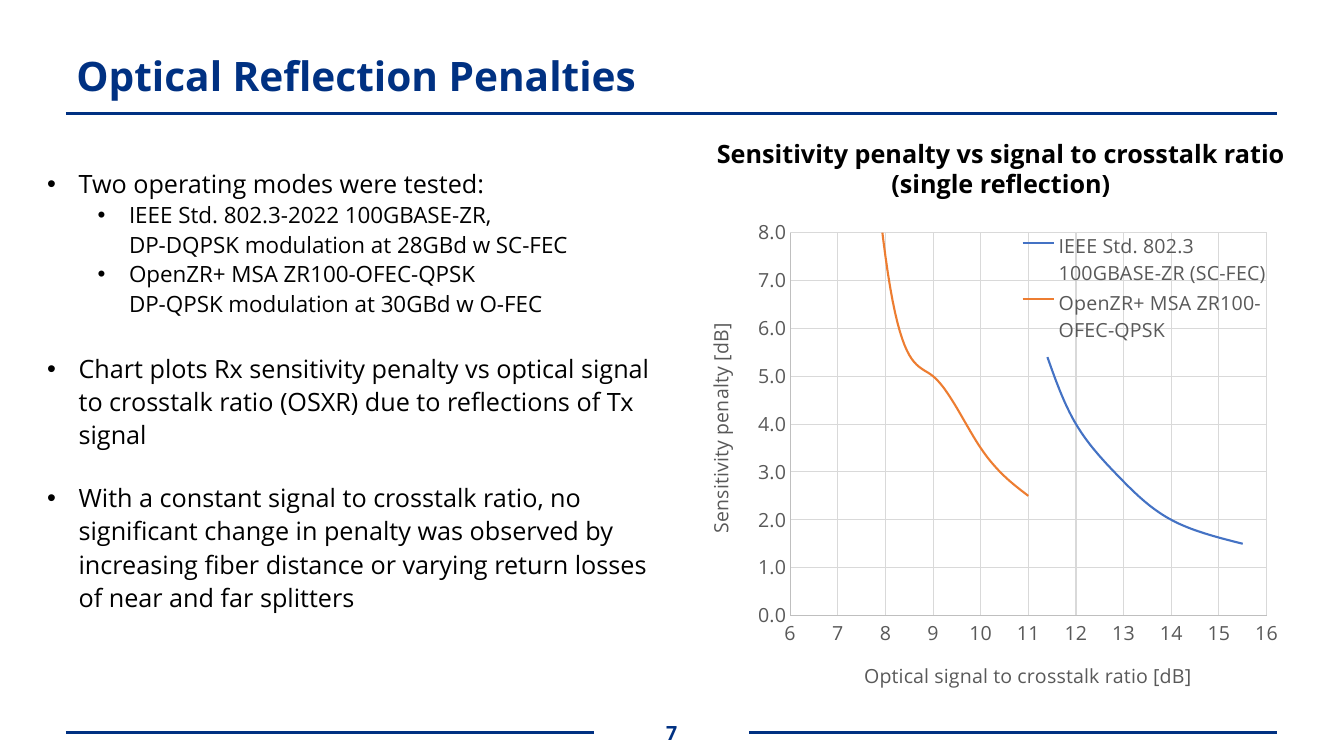
from dataclasses import dataclass
from typing import Any, Optional

from lxml.etree import SubElement
from pptx import Presentation
from pptx.chart.data import XyChartData
from pptx.dml.color import RGBColor
from pptx.enum.chart import XL_CHART_TYPE, XL_LEGEND_POSITION, XL_TICK_MARK
from pptx.enum.shapes import MSO_CONNECTOR, MSO_SHAPE
from pptx.enum.text import MSO_ANCHOR, PP_ALIGN
from pptx.oxml.ns import qn
from pptx.util import Pt

FONT = "Open Sans"
COLORS = {
    "navy": "003182", "black": "000000", "white": "FFFFFF", "gray": "595959",
    "axis": "BFBFBF", "grid": "D9D9D9", "blue": "4472C4", "orange": "ED7D31",
}


@dataclass(frozen=True)
class Rule:
    left: float
    right: float
    y: float


@dataclass(frozen=True)
class Bullet:
    text: str
    level: int = 0
    before: float = 0


@dataclass(frozen=True)
class Curve:
    name: str
    color: str
    points: tuple[tuple[Optional[float], Optional[float]], ...]


@dataclass(frozen=True)
class AxisSpec:
    title: str
    low: float
    high: float
    number_format: str
    title_at: tuple[float, float]


RULES = [Rule(47, 912.2, 81.1), Rule(47, 424, 523.4), Rule(535.2, 912.2, 523.4)]
BULLETS = [
    Bullet("Two operating modes were tested:"),
    Bullet("IEEE Std. 802.3-2022 100GBASE-ZR, \vDP-DQPSK modulation at 28GBd w SC-FEC", 1),
    Bullet("OpenZR+ MSA ZR100-OFEC-QPSK\vDP-QPSK modulation at 30GBd w O-FEC", 1),
    Bullet("Chart plots Rx sensitivity penalty vs optical signal to crosstalk ratio (OSXR) "
           "due to reflections of Tx signal", before=24),
    Bullet("With a constant signal to crosstalk ratio, no significant change in penalty was "
           "observed by increasing fiber distance or varying return losses of near and far "
           "splitters", before=21),
]
CURVES = [
    Curve("IEEE Std. 802.3 100GBASE-ZR (SC-FEC)", "blue",
          ((None, None), (15.5, 1.5), (14, 2), (12.9, 2.9), (12, 4), (11.4, 5.4))),
    Curve("OpenZR+ MSA ZR100-OFEC-QPSK", "orange",
          ((11, 2.5), (10, 3.5), (9, 5), (8, 7.5), (7, 20))),
]
X_AXIS = AxisSpec("Optical signal to crosstalk ratio [dB]", 6, 16, "0", (0.27, 0.93))
Y_AXIS = AxisSpec("Sensitivity penalty [dB]", 0, 8, "0.0", (0.01, 0.23))


def rgb(name: str) -> RGBColor:
    return RGBColor.from_string(COLORS[name])


def style_font(font: Any, size: float, color: str, bold: bool = False) -> None:
    font.name = FONT
    font.size = Pt(size)
    font.bold = bold
    font.color.rgb = rgb(color)


def style_line(line: Any, color: str, width: float) -> None:
    line.color.rgb = rgb(color)
    line.width = Pt(width)


def add_rule(s: Any, rule: Rule) -> None:
    sp = s.shapes.add_connector(
        MSO_CONNECTOR.STRAIGHT, Pt(rule.left), Pt(rule.y), Pt(rule.right), Pt(rule.y))
    style_line(sp.line, "navy", 2)
    SubElement(sp.element.spPr, qn("a:effectLst"))


def fill_text(sp: Any, text: str, size: float, color: str,
              align: PP_ALIGN, anchor: MSO_ANCHOR) -> None:
    """Put one bold paragraph into a shape."""
    tf = sp.text_frame
    tf.word_wrap = True
    tf.vertical_anchor = anchor
    tf.text = text
    p = tf.paragraphs[0]
    p.alignment = align
    style_font(p.runs[0].font, size, color, bold=True)


def add_bullets(s: Any) -> None:
    sp = s.shapes.add_textbox(Pt(26.6), Pt(114.5), Pt(453.6), Pt(365))
    tf = sp.text_frame
    tf.word_wrap = True
    for i, bullet in enumerate(BULLETS):
        p = tf.paragraphs[0] if i == 0 else tf.add_paragraph()
        p.text = bullet.text
        p.level = bullet.level
        pPr = p._p.get_or_add_pPr()
        pPr.set("marL", str(Pt(22.5 + 36 * bullet.level)))
        pPr.set("indent", str(-Pt(22.5)))
        SubElement(pPr, qn("a:buFont"), typeface="Arial")
        SubElement(pPr, qn("a:buChar"), char="•")
        p.line_spacing = 1.1
        if bullet.before:
            p.space_before = Pt(bullet.before)
        for r in p.runs:
            style_font(r.font, 18 - 2 * bullet.level, "black")


def place(parent: Any, index: int, inner: bool = False, **fractions: float) -> None:
    """Give a chart part a manual layout, in fractions of the chart."""
    for old in parent.findall(qn("c:layout")):
        parent.remove(old)
    layout = SubElement(parent, qn("c:layout"))
    parent.insert(index, layout)
    manual = SubElement(layout, qn("c:manualLayout"))
    if inner:
        SubElement(manual, qn("c:layoutTarget"), val="inner")
    for key in ("x", "y"):
        SubElement(manual, qn(f"c:{key}Mode"), val="edge")
    for key, value in fractions.items():
        SubElement(manual, qn(f"c:{key}"), val=str(value))


def style_axis(axis: Any, spec: AxisSpec) -> None:
    axis.minimum_scale, axis.maximum_scale = spec.low, spec.high
    axis.major_unit = 1
    axis.major_tick_mark = axis.minor_tick_mark = XL_TICK_MARK.NONE
    axis.has_major_gridlines = True
    style_line(axis.major_gridlines.format.line, "grid", 0.75)
    style_line(axis.format.line, "axis", 0.75)
    labels = axis.tick_labels
    labels.number_format = spec.number_format
    labels.number_format_is_linked = False
    style_font(labels.font, 14, "gray")
    tf = axis.axis_title.text_frame
    tf.text = spec.title
    style_font(tf.paragraphs[0].runs[0].font, 14, "gray")
    x, y = spec.title_at
    place(axis.axis_title._element, 1, x=x, y=y)


def style_curve(series: Any, curve: Curve) -> None:
    """Smooth the line and leave points without a value empty."""
    style_line(series.format.line, curve.color, 1.5)
    ser = series._element
    for old in ser.findall(qn("c:smooth")):
        ser.remove(old)
    SubElement(ser, qn("c:smooth"), val="1")
    for pt in list(ser.iter(qn("c:pt"))):
        if pt.findtext(qn("c:v")) == "None":
            pt.getparent().remove(pt)


def add_penalty_chart(s: Any) -> None:
    data = XyChartData()
    for curve in CURVES:
        series = data.add_series(curve.name)
        for x, y in curve.points:
            series.add_data_point(x, y)
    chart = s.shapes.add_chart(
        XL_CHART_TYPE.XY_SCATTER_SMOOTH_NO_MARKERS,
        Pt(496.8), Pt(151.2), Pt(436.3), Pt(345.6), data).chart
    style_font(chart.font, 14, "black")
    chart.has_title = False
    plot = chart.plots[0]
    plot.vary_by_categories = False
    for series, curve in zip(plot.series, CURVES):
        style_curve(series, curve)
    style_axis(chart.category_axis, X_AXIS)
    style_axis(chart.value_axis, Y_AXIS)
    chart.has_legend = True
    legend = chart.legend
    legend.position = XL_LEGEND_POSITION.RIGHT
    legend.include_in_layout = True
    style_font(legend.font, 14, "gray")
    place(legend._element, 1, x=0.53, y=0.04, w=0.41, h=0.24)
    place(chart._chartSpace.chart.plotArea, 0, inner=True, x=0.155, y=0.044, w=0.78, h=0.8)


def main() -> None:
    prs = Presentation()
    prs.slide_width, prs.slide_height = Pt(960), Pt(540)
    s = prs.slides.add_slide(prs.slide_layouts[6])
    for rule in RULES:
        add_rule(s, rule)
    title = s.shapes.add_textbox(Pt(47.5), Pt(35.5), Pt(864), Pt(41))
    fill_text(title, "Optical Reflection Penalties", 29, "navy", PP_ALIGN.LEFT, MSO_ANCHOR.MIDDLE)
    title.text_frame.paragraphs[0].line_spacing = 0.9
    heading = s.shapes.add_shape(MSO_SHAPE.RECTANGLE, Pt(496.8), Pt(95), Pt(436.3), Pt(51))
    heading.shadow.inherit = False
    heading.fill.solid()
    heading.fill.fore_color.rgb = rgb("white")
    heading.line.fill.background()
    fill_text(heading, "Sensitivity penalty vs signal to crosstalk ratio (single reflection)",
              18, "black", PP_ALIGN.CENTER, MSO_ANCHOR.TOP)
    number = s.shapes.add_textbox(Pt(412.6), Pt(509), Pt(134.6), Pt(28.8))
    fill_text(number, "7", 14, "navy", PP_ALIGN.CENTER, MSO_ANCHOR.MIDDLE)
    add_penalty_chart(s)
    add_bullets(s)
    prs.save("out.pptx")


if __name__ == "__main__":
    main()
